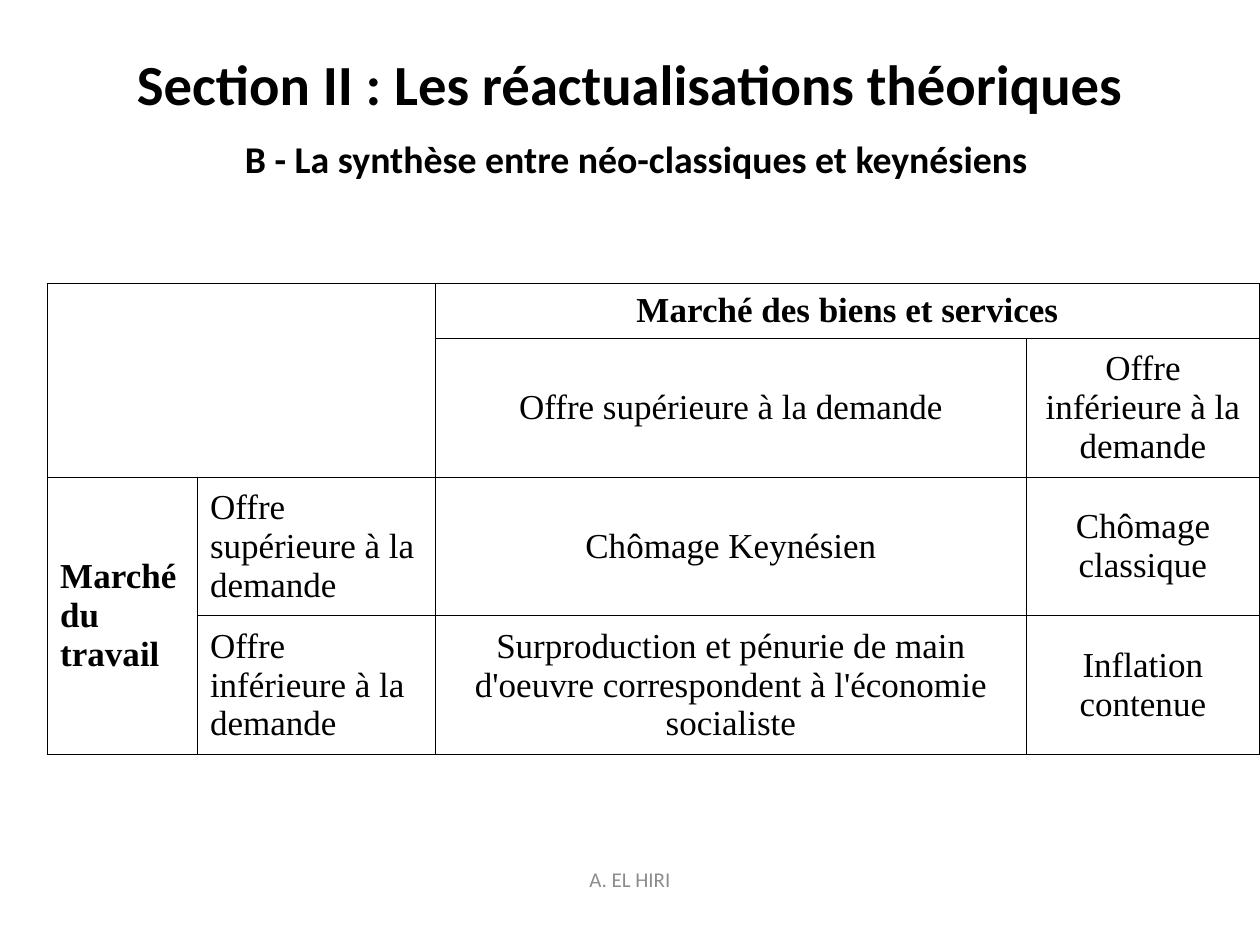
from dataclasses import dataclass

from lxml import etree
from pptx import Presentation
from pptx.dml.color import RGBColor
from pptx.enum.text import MSO_ANCHOR, PP_ALIGN
from pptx.oxml.ns import qn
from pptx.util import Cm, Pt

CENTER, LEFT = PP_ALIGN.CENTER, PP_ALIGN.LEFT
MIDDLE, TOP = MSO_ANCHOR.MIDDLE, MSO_ANCHOR.TOP


@dataclass(frozen=True)
class Theme:
    heading_font: str = "Calibri"
    table_font: str = "Times New Roman"
    ink: str = "000000"
    muted: str = "8C8C8C"
    title: float = 32.4
    subtitle: float = 21.6
    table: float = 20
    footer: float = 12
    border: float = 0.75


THEME = Theme()

COLUMNS = (3.02, 4.8, 11.91, 4.7)
# Minimum heights: the rows grow to fit their text
ROWS = (0, 0.69, 0.69, 0.69)
TABLE_HEIGHT = 9.47
# (first row, first column, last row, last column)
MERGES = ((0, 0, 1, 1), (0, 2, 0, 3), (2, 0, 3, 0))
# (row, column): (text, bold)
CELLS = {
    (0, 2): ("Marché des biens et services", True),
    (1, 2): ("Offre supérieure à la demande", False),
    (1, 3): ("Offre inférieure à la demande", False),
    (2, 0): ("Marché du travail", True),
    (2, 1): ("Offre supérieure à la demande", False),
    (2, 2): ("Chômage Keynésien", False),
    (2, 3): ("Chômage classique", False),
    (3, 1): ("Offre inférieure à la demande", False),
    (3, 2): ("Surproduction et pénurie de main d'oeuvre correspondent "
             "à l'économie socialiste", False),
    (3, 3): ("Inflation contenue", False),
}


def set_font(font, name, size, color, bold=False):
    font.name, font.size, font.bold = name, Pt(size), bold
    font.color.rgb = RGBColor.from_string(color)


def add_text_box(s, left, top, width, height, anchor):
    """Add a wrapping text box and return its centred first paragraph."""
    tf = s.shapes.add_textbox(Cm(left), Cm(top), Cm(width), Cm(height)).text_frame
    tf.word_wrap = True
    tf.vertical_anchor = anchor
    p = tf.paragraphs[0]
    p.alignment = CENTER
    return p


def add_title(s, title, subtitle):
    p = add_text_box(s, 1.27, 0.76, 22.86, 3.18, MIDDLE)
    for i, (text, size) in enumerate(((title, THEME.title), (" ", THEME.title),
                                      (subtitle, THEME.subtitle))):
        if i == 1:
            p.add_line_break()
        r = p.add_run()
        r.text = text
        set_font(r.font, THEME.heading_font, size, THEME.ink, True)


def add_footer(s, text):
    p = add_text_box(s, 8.68, 17.35, 8.04, 1.32, TOP)
    p.text = text
    set_font(p.font, THEME.heading_font, THEME.footer, THEME.muted)


def set_borders(cell):
    tc_pr = cell._tc.get_or_add_tcPr()
    for i, side in enumerate(("lnL", "lnR", "lnT", "lnB")):
        ln = etree.Element(qn(f"a:{side}"), w=str(Pt(THEME.border)))
        fill = etree.SubElement(ln, qn("a:solidFill"))
        etree.SubElement(fill, qn("a:srgbClr"), val=THEME.ink)
        tc_pr.insert(i, ln)


def add_market_table(s):
    frame = s.shapes.add_table(len(ROWS), len(COLUMNS), Cm(0.96), Cm(5.72),
                               Cm(sum(COLUMNS)), Cm(TABLE_HEIGHT))
    table = frame.table
    table.first_row = table.horz_banding = False
    for column, width in zip(table.columns, COLUMNS):
        column.width = Cm(width)
    for row, height in zip(table.rows, ROWS):
        row.height = Cm(height)
    frame.height = Cm(TABLE_HEIGHT)
    for r1, c1, r2, c2 in MERGES:
        table.cell(r1, c1).merge(table.cell(r2, c2))

    for cell in table.iter_cells():
        cell.fill.background()
        set_borders(cell)

    for (row, col), (text, bold) in CELLS.items():
        cell = table.cell(row, col)
        cell.vertical_anchor = MIDDLE
        p = cell.text_frame.paragraphs[0]
        p.text = text
        p.alignment = LEFT if col < 2 else CENTER
        set_font(p.font, THEME.table_font, THEME.table, THEME.ink, bold)


def main():
    prs = Presentation()
    prs.slide_width, prs.slide_height = Cm(25.4), Cm(19.05)
    s = prs.slides.add_slide(prs.slide_layouts[6])

    # Heading
    add_title(s, "Section II\u00a0: Les réactualisations théoriques",
              "B - La synthèse entre néo-classiques et keynésiens")
    # Markets and resulting regimes
    add_market_table(s)
    # Author
    add_footer(s, "A. EL HIRI")

    prs.save("out.pptx")


if __name__ == "__main__":
    main()
